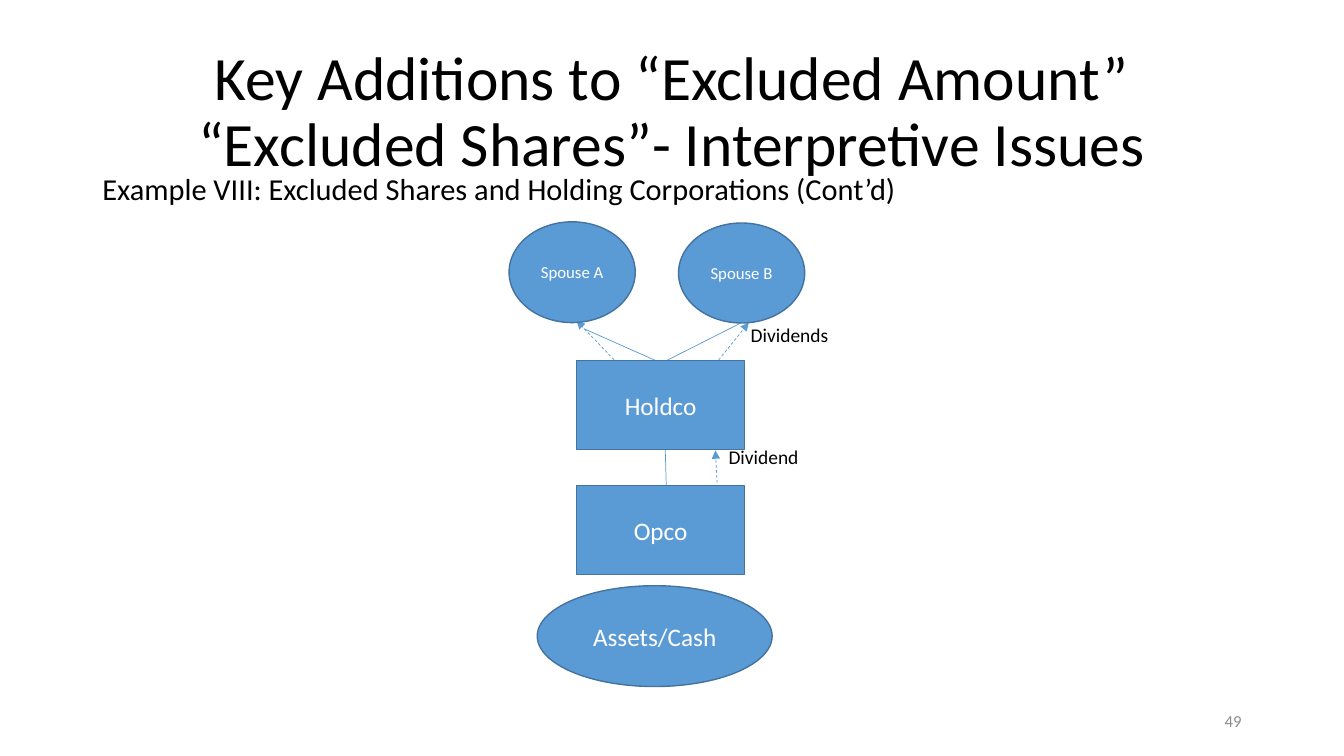
from pptx import Presentation
from pptx.dml.color import RGBColor
from pptx.enum.dml import MSO_LINE
from pptx.enum.shapes import MSO_CONNECTOR, MSO_SHAPE
from pptx.enum.text import MSO_ANCHOR, PP_ALIGN
from pptx.oxml.ns import qn
from pptx.util import Cm, Pt
from lxml.etree import SubElement

BLACK = RGBColor(0x00, 0x00, 0x00)
WHITE = RGBColor(0xFF, 0xFF, 0xFF)
GREY = RGBColor(0x8C, 0x8C, 0x8C)
BLUE = RGBColor(0x5B, 0x9B, 0xD5)
OUTLINE = RGBColor(0x43, 0x73, 0x9E)


def write(frame, text, size, color=BLACK, align=PP_ALIGN.LEFT,
          anchor=MSO_ANCHOR.MIDDLE, spacing=1.0, inset=True):
    frame.word_wrap = True
    frame.vertical_anchor = anchor
    if not inset:
        frame.margin_left = frame.margin_right = 0
        frame.margin_top = frame.margin_bottom = 0
    paragraph = frame.paragraphs[0]
    paragraph.text = text
    paragraph.alignment = align
    paragraph.line_spacing = spacing
    paragraph.font.name = "Calibri"
    paragraph.font.size = Pt(size)
    paragraph.font.color.rgb = color


def add_text(slide, box, text, size, **style):
    caption = slide.shapes.add_textbox(*map(Cm, box))
    write(caption.text_frame, text, size, **style)


def add_entity(slide, kind, box, name, size):
    entity = slide.shapes.add_shape(kind, *map(Cm, box))
    entity.shadow.inherit = False
    entity.fill.solid()
    entity.fill.fore_color.rgb = BLUE
    entity.line.color.rgb = OUTLINE
    entity.line.width = Pt(1)
    write(entity.text_frame, name, size, color=WHITE, align=PP_ALIGN.CENTER)


def add_link(slide, start, end, dividend=False):
    link = slide.shapes.add_connector(
        MSO_CONNECTOR.STRAIGHT, *map(Cm, start + end))
    link.line.color.rgb = BLUE
    link.line.width = Pt(0.5)
    properties = link._element.spPr
    if dividend:
        link.line.dash_style = MSO_LINE.DASH
        SubElement(properties.find(qn("a:ln")), qn("a:tailEnd"), type="triangle")
    SubElement(properties, qn("a:effectLst"))


def draw_heading(slide, left, top, width):
    add_text(slide, (left, top, width, 3.68),
             "Key Additions to “Excluded Amount”\v“Excluded Shares”- Interpretive Issues",
             44, align=PP_ALIGN.CENTER, spacing=0.9)
    add_text(slide, (left, top + 3.4, width, 1),
             "Example VIII: Excluded Shares and Holding Corporations (Cont’d)",
             21.7, anchor=MSO_ANCHOR.TOP, spacing=0.7)


def draw_structure(slide, left, top):
    links = [
        ((1.88, 2.69), (3.93, 3.6), False),
        ((5.86, 2.54), (3.86, 3.55), False),
        ((3.93, 5.54), (3.96, 6.65), False),
        ((2.82, 3.66), (1.7, 2.49), True),
        ((5.2, 3.58), (6.04, 2.54), True),
        ((5.25, 6.7), (5.2, 5.76), True),
    ]
    entities = [
        (MSO_SHAPE.OVAL, 0, 0, 3.18, 2.54, "Spouse A", 12),
        (MSO_SHAPE.OVAL, 4.27, 0.03, 3.18, 2.52, "Spouse B", 12),
        (MSO_SHAPE.RECTANGLE, 1.7, 3.5, 4.24, 2.24, "Holdco", 18),
        (MSO_SHAPE.RECTANGLE, 1.7, 6.65, 4.24, 2.24, "Opco", 18),
        (MSO_SHAPE.OVAL, 0.71, 9.17, 5.92, 2.54, "Assets/Cash", 18),
    ]
    payments = [(6.09, 2.54, "Dividends"), (5.53, 5.62, "Dividend")]
    for start, end, dividend in links:
        add_link(slide, (left + start[0], top + start[1]),
                 (left + end[0], top + end[1]), dividend)
    for kind, x, y, width, height, name, size in entities:
        add_entity(slide, kind, (left + x, top + y, width, height), name, size)
    for x, y, payment in payments:
        add_text(slide, (left + x, top + y, 2.6, 0.6), payment, 13.9, inset=False)


def draw_page_number(slide, left, top, width):
    add_text(slide, (left, top, width, 1.02), "49", 12,
             color=GREY, align=PP_ALIGN.RIGHT)


def main():
    deck = Presentation()
    deck.slide_width = Cm(33.87)
    deck.slide_height = Cm(19.05)
    slide = deck.slides.add_slide(deck.slide_layouts[6])
    draw_heading(slide, 2.33, 1.02, 29.21)
    draw_structure(slide, 12.83, 5.59)
    draw_page_number(slide, 23.92, 17.65, 7.62)
    deck.save("out.pptx")


if __name__ == "__main__":
    main()
